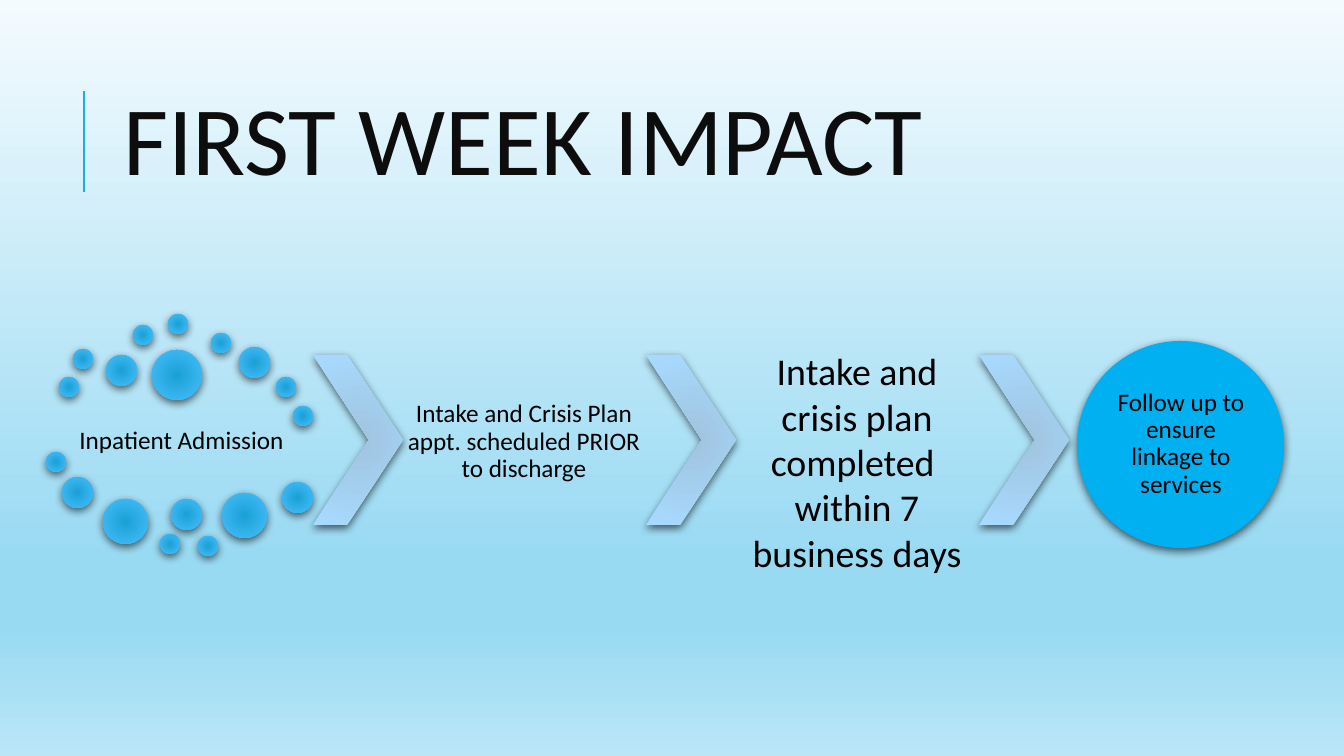
from lxml.etree import SubElement
from pptx import Presentation
from pptx.dml.color import RGBColor
from pptx.enum.shapes import MSO_CONNECTOR, MSO_SHAPE
from pptx.enum.text import MSO_ANCHOR, MSO_AUTO_SIZE, PP_ALIGN
from pptx.oxml.ns import qn
from pptx.util import Pt

TITLE = "FIRST WEEK IMPACT"
FONT = "Calibri"
BACKGROUND_STOPS = [(0, "F4FBFE"), (74, "99DAF3"), (83, "99DAF3"), (100, "BBE6F7")]
DOT_STOPS = [(0, "1AA1D4"), (100, "48BFFF")]
CHEVRON_STOPS = [(0, "A0C4DF"), (100, "A8DAFF")]
STEPS = [
    ((60, 368, 243, 146), 3, 18, 0.9, ["Inpatient Admission"]),
    ((402, 314, 244, 256), 3, 18, 0.9,
     ["Intake and Crisis Plan appt. scheduled PRIOR to discharge"]),
    ((735, 314, 244, 295), 4, 27, 1.0,
     ["Intake and crisis plan completed ", "within 7 business days"]),
    ((1108, 371, 146, 146), 0, 18, 0.9, ["Follow up to ensure linkage to services"]),
]
DOTS_BY_DIAMETER = {
    20: [(59, 377), (73, 349), (133, 325), (168, 314), (211, 333), (276, 377),
         (293, 406), (46, 452), (160, 534), (198, 536)],
    31: [(106, 355), (239, 347), (62, 477), (171, 499), (282, 482)],
    45: [(103, 499), (222, 493)],
    50: [(152, 350)],
}
CHEVRON_LEFT, CHEVRON_PITCH, CHEVRON_COUNT = 313, 333, 3
CHEVRON_TOP, CHEVRON_WIDTH, CHEVRON_HEIGHT = 355, 90, 170
GOAL_CIRCLE = (1077, 341, 207, 207)
EMU_PER_PX = 914400 / 100.8


def px(length):
    return round(length * EMU_PER_PX)


def box(*lengths):
    return [px(length) for length in lengths]


def color(value):
    return RGBColor.from_string(value)


def set_gradient(properties, stops, angle=None):
    solid = properties.find(qn("a:solidFill"))
    gradient = SubElement(properties, qn("a:gradFill"), rotWithShape="1")
    properties.replace(solid, gradient)
    stop_list = SubElement(gradient, qn("a:gsLst"))
    for position, value in stops:
        stop = SubElement(stop_list, qn("a:gs"), pos=str(position * 1000))
        SubElement(stop, qn("a:srgbClr"), val=value)
    if angle is None:
        circle = SubElement(gradient, qn("a:path"), path="circle")
        SubElement(circle, qn("a:fillToRect"), dict.fromkeys("ltrb", "100000"))
    else:
        SubElement(gradient, qn("a:lin"), ang=str(angle * 60000), scaled="0")


def add_shadow(shape):
    shape.shadow.inherit = False
    effects = shape.element.spPr.find(qn("a:effectLst"))
    shadow = SubElement(effects, qn("a:outerShdw"), blurRad=str(Pt(6)), dist=str(Pt(2)),
                        dir="5400000", algn="ctr", rotWithShape="0")
    black = SubElement(shadow, qn("a:srgbClr"), val="000000")
    SubElement(black, qn("a:alpha"), val="60000")


def add_filled_shape(slide, kind, position, fill, stops=None):
    shape = slide.shapes.add_shape(kind, *box(*position))
    shape.fill.solid()
    shape.fill.fore_color.rgb = color(fill)
    shape.line.fill.background()
    if stops:
        set_gradient(shape.element.spPr, stops)
    add_shadow(shape)
    return shape


def add_run(paragraph, text, size, value):
    run = paragraph.add_run()
    run.text = text
    run.font.name = FONT
    run.font.size = Pt(size)
    run.font.color.rgb = color(value)
    return run


def add_step_text(slide, position, inset, size, spacing, lines):
    frame = slide.shapes.add_textbox(*box(*position)).text_frame
    frame.word_wrap = True
    frame.vertical_anchor = MSO_ANCHOR.MIDDLE
    frame.margin_left = frame.margin_right = px(inset)
    frame.margin_top = frame.margin_bottom = px(inset)
    for index, line in enumerate(lines):
        paragraph = frame.add_paragraph() if index else frame.paragraphs[0]
        paragraph.alignment = PP_ALIGN.CENTER
        paragraph.line_spacing = spacing
        add_run(paragraph, line, size, "000000")


def add_title(slide):
    rule = slide.shapes.add_connector(MSO_CONNECTOR.STRAIGHT, *box(84, 192, 84, 91))
    rule.line.color.rgb = color("1CADE4")
    rule.line.width = Pt(1.5)
    SubElement(rule.element.spPr, qn("a:effectLst"))
    title = slide.shapes.title
    title.left, title.top, title.width, title.height = box(113, 65, 1072, 165)
    frame = title.text_frame
    frame.word_wrap = True
    frame.auto_size = MSO_AUTO_SIZE.NONE
    frame.vertical_anchor = MSO_ANCHOR.MIDDLE
    paragraph = frame.paragraphs[0]
    paragraph.alignment = PP_ALIGN.LEFT
    paragraph.line_spacing = 0.8
    run = add_run(paragraph, TITLE, 70, "0D0D0D")
    run.font.element.set("spc", "100") if hasattr(run.font, "element") else \
        run.text_frame_properties if hasattr(run, "text_frame_properties") else \
        paragraph.runs[0].font.size


def main():
    presentation = Presentation()
    presentation.slide_width, presentation.slide_height = box(1344, 756)
    slide = presentation.slides.add_slide(presentation.slide_layouts[5])
    slide.background.fill.solid()
    set_gradient(slide.element.find(".//" + qn("p:bgPr")), BACKGROUND_STOPS, 90)
    add_title(slide)
    for diameter, corners in DOTS_BY_DIAMETER.items():
        for left, top in corners:
            add_filled_shape(slide, MSO_SHAPE.OVAL, (left, top, diameter, diameter),
                             "1AA1D4", DOT_STOPS)
    for index in range(CHEVRON_COUNT):
        left = CHEVRON_LEFT + index * CHEVRON_PITCH
        chevron = add_filled_shape(slide, MSO_SHAPE.CHEVRON,
                                   (left, CHEVRON_TOP, CHEVRON_WIDTH, CHEVRON_HEIGHT),
                                   "A0C4DF", CHEVRON_STOPS)
        chevron.adjustments[0] = 0.62
    add_filled_shape(slide, MSO_SHAPE.OVAL, GOAL_CIRCLE, "00B0F0")
    for step in STEPS:
        add_step_text(slide, *step)
    presentation.save("out.pptx")


if __name__ == "__main__":
    main()
